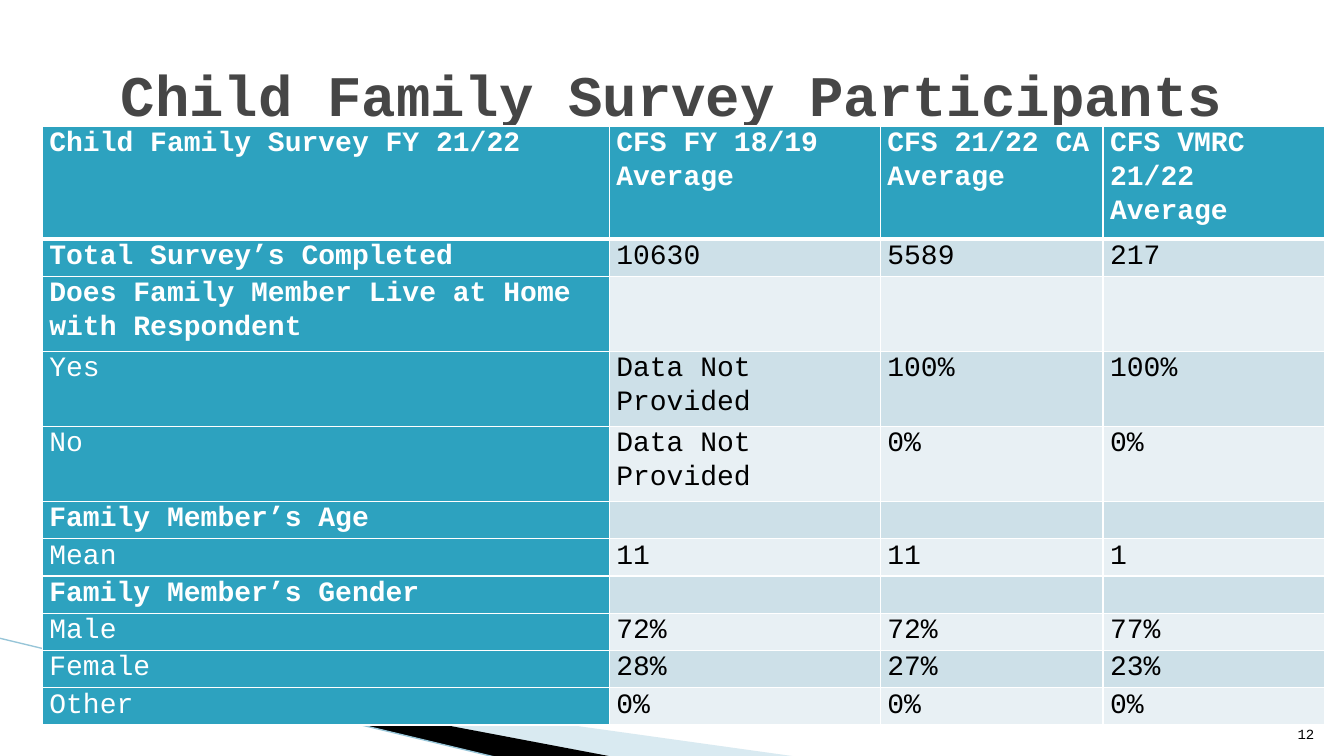
import pptx
import pptx.dml.color
import pptx.enum.shapes
import pptx.enum.text
import pptx.oxml
import pptx.oxml.ns
import pptx.util
from lxml import etree

RGBColor = pptx.dml.color.RGBColor
PP_ALIGN = pptx.enum.text.PP_ALIGN
MSO_ANCHOR = pptx.enum.text.MSO_ANCHOR
qn = pptx.oxml.ns.qn

PX = 4572  # EMU per px, 200 px to the inch
FONT = "Courier New"
WHITE = RGBColor(0xFF, 0xFF, 0xFF)
BLACK = RGBColor(0, 0, 0)
TITLE_GRAY = RGBColor(0x46, 0x46, 0x46)
TEAL = RGBColor(0x2D, 0xA2, 0xBF)
BAND_DARK = RGBColor(0xCD, 0xE0, 0xE8)
BAND_LIGHT = RGBColor(0xE8, 0xF0, 0xF4)
SWEEP_BLUE = RGBColor(0xA0, 0xCB, 0xDC)
LINE_BLUE = RGBColor(0x97, 0xC5, 0xD8)

COLUMN_WIDTHS = [1125, 538, 442, 440]
HEADER_HEIGHT, LINE_HEIGHT, TWO_LINE_HEIGHT = 224, 74, 149
HEADER = ["Child Family Survey FY 21/22", "CFS FY 18/19 Average",
          "CFS 21/22 CA Average", "CFS VMRC 21/22 Average"]
ROWS = [
    ["Total Survey’s Completed", "10630", "5589", "217"],
    ["Does Family Member Live at Home with Respondent", "", "", ""],
    ["Yes", "Data Not Provided", "100%", "100%"],
    ["No", "Data Not Provided", "0%", "0%"],
    ["Family Member’s Age", "", "", ""],
    ["Mean", "11", "11", "1"],
    ["Family Member’s Gender", "", "", ""],
    ["Male", "72%", "72%", "77%"],
    ["Female", "28%", "27%", "23%"],
    ["Other", "0%", "0%", "0%"],
]
TWO_LINE_ROWS = {2, 3, 4}
BOLD_ROWS = {0, 1, 2, 5, 7}


def px(*lengths):
    return [pptx.util.Emu(length * PX) for length in lengths]


def write_text(frame, text, size=20, color=BLACK, bold=False,
               align=PP_ALIGN.LEFT, spacing=None):
    paragraph = frame.paragraphs[0]
    paragraph.alignment = align
    if spacing:
        paragraph.line_spacing = spacing
    run = paragraph.add_run()
    run.text = text
    run.font.name = FONT
    run.font.size = pptx.util.Pt(size)
    run.font.bold = bold
    run.font.color.rgb = color


def add_text_box(slide, box, text, anchor, **text_format):
    frame = slide.shapes.add_textbox(*px(*box)).text_frame
    frame.word_wrap = True
    frame.vertical_anchor = anchor
    write_text(frame, text, **text_format)


def add_sweep(slide, points, color, opacity=100):
    builder = slide.shapes.build_freeform(*points[0], scale=PX)
    builder.add_line_segments(points[1:], close=True)
    shape = builder.convert_to_shape()
    shape.shadow.inherit = False
    shape.fill.solid()
    shape.fill.fore_color.rgb = color
    shape.line.fill.background()
    if opacity < 100:
        fill_color = shape.fill._xPr.find(".//" + qn("a:srgbClr"))
        etree.SubElement(fill_color, qn("a:alpha"), val=str(opacity * 1000))


def add_line(slide, ends, color, width):
    line = slide.shapes.add_connector(
        pptx.enum.shapes.MSO_CONNECTOR.STRAIGHT, *px(*ends))
    line.line.color.rgb = color
    line.line.width = pptx.util.Pt(width)
    etree.SubElement(line._element.spPr, qn("a:effectLst"))


def set_borders(cell, top, bottom):
    properties = cell._tc.get_or_add_tcPr()
    for side, width in (("L", 1), ("R", 1), ("T", top), ("B", bottom)):
        border = etree.SubElement(properties, qn("a:ln" + side),
                                  w=str(pptx.util.Pt(width)))
        fill = etree.SubElement(border, qn("a:solidFill"))
        etree.SubElement(fill, qn("a:srgbClr"), val=str(WHITE))


def fill_cell(cell, text, row, column):
    set_borders(cell, top=3 if row == 1 else 1, bottom=3 if row == 0 else 1)
    cell.margin_left, cell.margin_right = px(14, 14)
    cell.margin_top = cell.margin_bottom = 0
    is_heading = row == 0 or column == 0
    band = BAND_DARK if row % 2 else BAND_LIGHT
    cell.fill.solid()
    cell.fill.fore_color.rgb = TEAL if is_heading else band
    if text:
        write_text(cell.text_frame, text, spacing=1.07,
                   color=WHITE if is_heading else BLACK,
                   bold=is_heading and row in BOLD_ROWS)


def add_survey_table(slide, left, top):
    rows = [HEADER] + ROWS
    heights = [HEADER_HEIGHT] + [
        TWO_LINE_HEIGHT if row in TWO_LINE_ROWS else LINE_HEIGHT
        for row in range(1, len(rows))]
    table = slide.shapes.add_table(
        len(rows), len(HEADER),
        *px(left, top, sum(COLUMN_WIDTHS), sum(heights))).table
    for column, width in zip(table.columns, px(*COLUMN_WIDTHS)):
        column.width = width
    for table_row, height in zip(table.rows, px(*heights)):
        table_row.height = height
    for row, texts in enumerate(rows):
        for column, text in enumerate(texts):
            fill_cell(table.cell(row, column), text, row, column)


def main():
    presentation = pptx.Presentation()
    presentation.slide_width, presentation.slide_height = px(2667, 1500)
    slide = presentation.slides.add_slide(presentation.slide_layouts[6])

    # Corner decoration
    add_sweep(slide, [(146, 1301), (1586, 1502), (1216, 1502), (146, 1300)],
              SWEEP_BLUE, opacity=40)
    add_sweep(slide, [(142, 1298), (1218, 1502), (992, 1504), (144, 1300)],
              BLACK)
    add_line(slide, (-2, 1266, 990, 1504), LINE_BLUE, 0.95)

    # Page number and title
    add_text_box(slide, (2522, 1402, 106, 80), "12", MSO_ANCHOR.BOTTOM,
                 size=10, align=PP_ALIGN.RIGHT)
    add_text_box(slide, (134, 60, 2400, 250),
                 "Child Family Survey Participants", MSO_ANCHOR.MIDDLE,
                 size=41, color=TITLE_GRAY, bold=True, align=PP_ALIGN.CENTER)

    # Survey results
    add_survey_table(slide, 84, 250)
    presentation.save("out.pptx")


if __name__ == "__main__":
    main()
